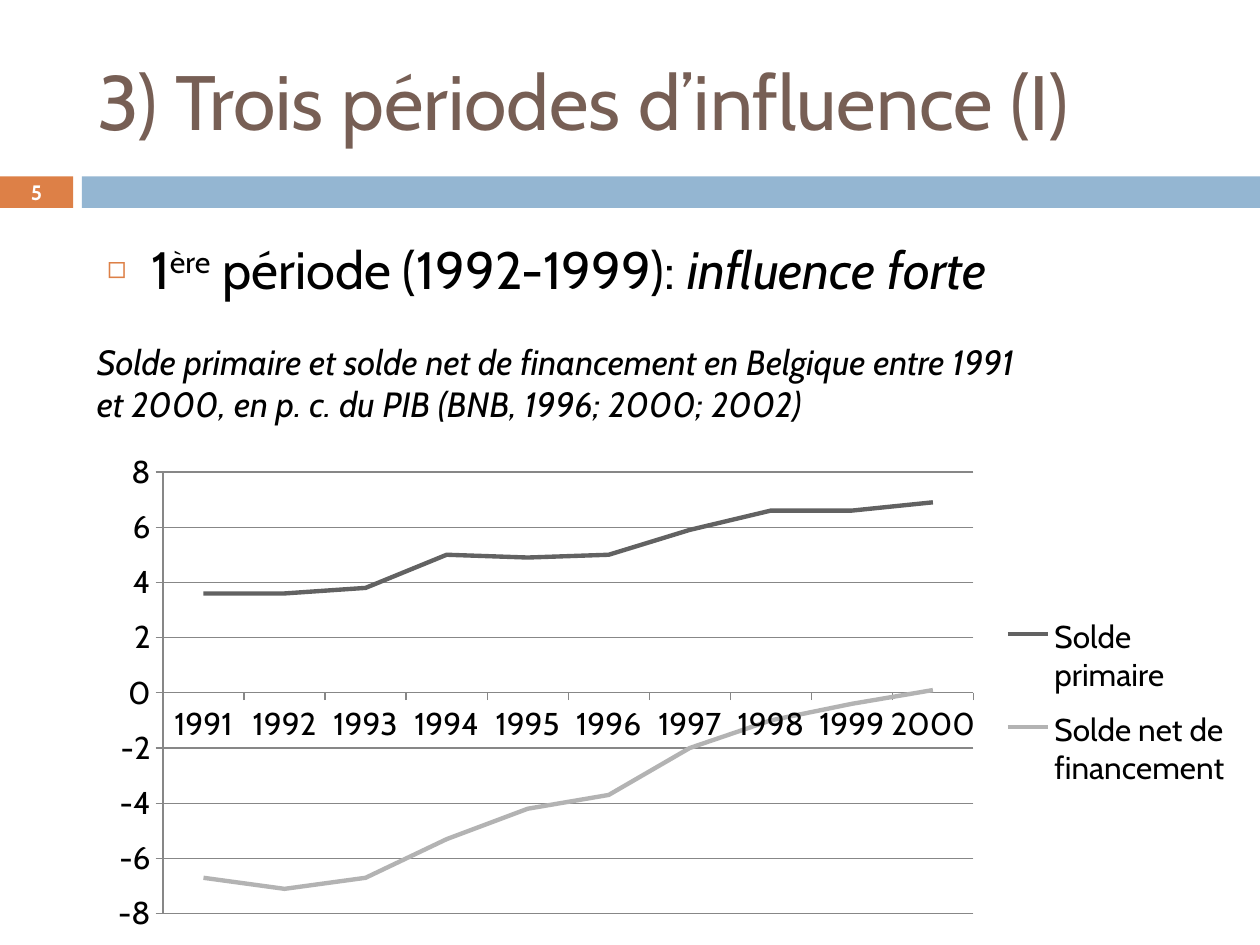
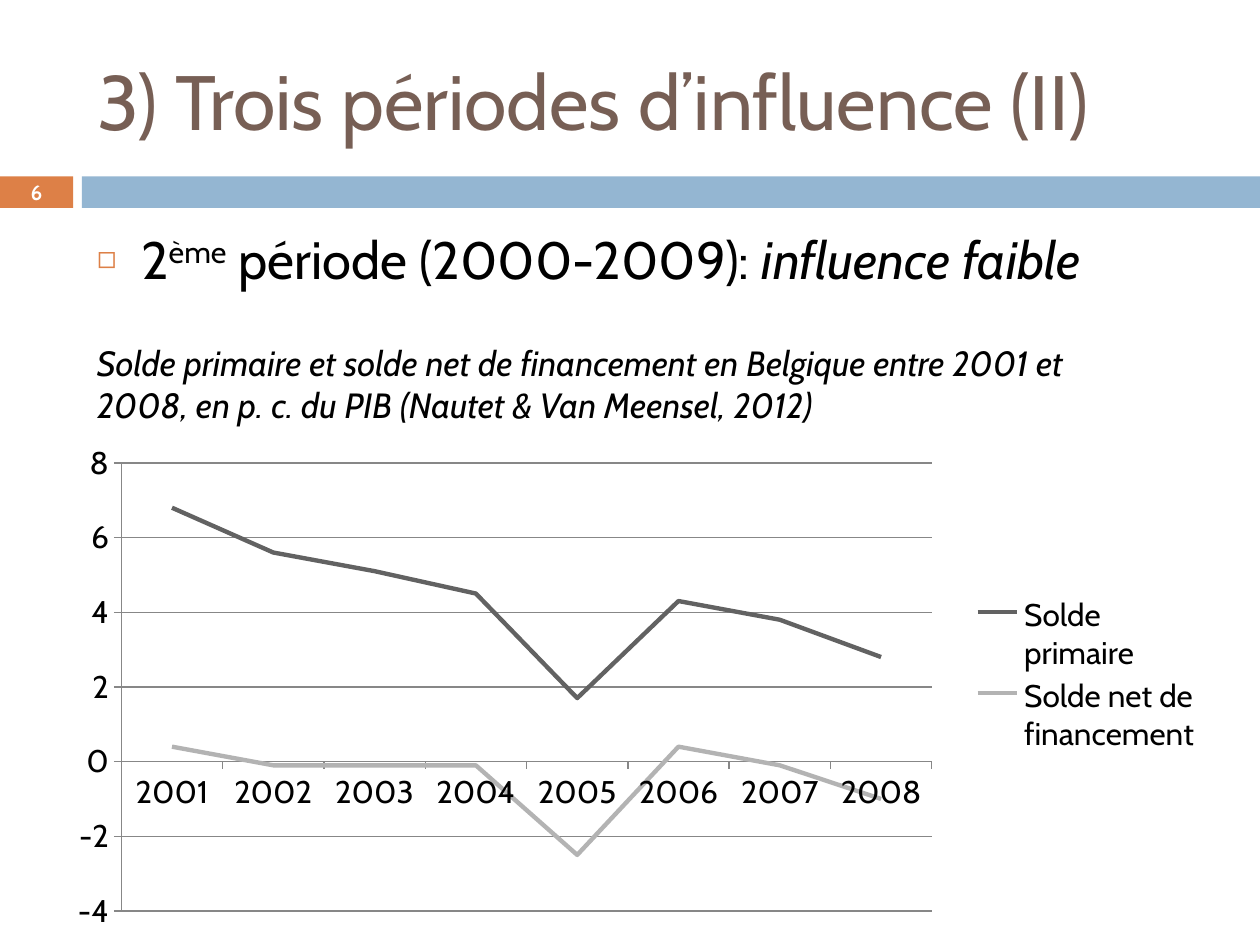
from pptx import Presentation
from pptx.chart.data import CategoryChartData
from pptx.dml.color import RGBColor
from pptx.enum.chart import XL_CHART_TYPE, XL_LEGEND_POSITION, XL_TICK_MARK
from pptx.enum.shapes import MSO_SHAPE
from pptx.enum.text import MSO_ANCHOR, MSO_AUTO_SIZE, PP_ALIGN
from pptx.oxml import parse_xml
from pptx.oxml.ns import nsdecls, qn
from pptx.util import Inches, Pt

FONT = "Cabin"
BLACK = RGBColor(0x00, 0x00, 0x00)
WHITE = RGBColor(0xFF, 0xFF, 0xFF)
BROWN = RGBColor(0x77, 0x5F, 0x55)
ORANGE = RGBColor(0xDD, 0x80, 0x47)
BLUE = RGBColor(0x94, 0xB6, 0xD2)
GRID_GREY = RGBColor(0x87, 0x87, 0x87)
SERIES_GREYS = (RGBColor(0x62, 0x62, 0x62), RGBColor(0xB3, 0xB3, 0xB3))


def manual_layout(left, top, width, height, inner=False):
    """Return a c:layout element; the numbers are fractions of the chart."""
    target = '<c:layoutTarget val="inner"/>' if inner else ""
    return parse_xml(
        f'<c:layout {nsdecls("c")}><c:manualLayout>{target}'
        '<c:xMode val="edge"/><c:yMode val="edge"/>'
        f'<c:x val="{left}"/><c:y val="{top}"/><c:w val="{width}"/><c:h val="{height}"/>'
        "</c:manualLayout></c:layout>")


class Deck:
    def __init__(self):
        self.prs = Presentation()
        self.prs.slide_width, self.prs.slide_height = Inches(10), Inches(7.5)
        self.slide = None

    def new_slide(self, title, number):
        self.slide = self.prs.slides.add_slide(self.prs.slide_layouts[1])
        self.band(0, 0.58, ORANGE)
        self.band(0.65, 9.35, BLUE)
        self.title(title)
        self.page_number(number)

    def place(self, shape, left, top, width, height):
        shape.left, shape.top = Inches(left), Inches(top)
        shape.width, shape.height = Inches(width), Inches(height)

    def run(self, paragraph, text, size, color=BLACK, bold=False, italic=False):
        run = paragraph.add_run()
        run.text = text
        font = run.font
        font.name, font.size, font.bold, font.italic = FONT, Pt(size), bold, italic
        font.color.rgb = color
        return run

    def band(self, left, width, color):
        band = self.slide.shapes.add_shape(
            MSO_SHAPE.RECTANGLE, Inches(left), Inches(1.4), Inches(width), Inches(0.25))
        band.shadow.inherit = False
        band.fill.solid()
        band.fill.fore_color.rgb = color
        band.line.fill.background()

    def title(self, text):
        title = self.slide.shapes.title
        self.place(title, 0.67, 0.25, 8.92, 1.08)
        frame = title.text_frame
        frame.auto_size = MSO_AUTO_SIZE.NONE
        frame.vertical_anchor = MSO_ANCHOR.MIDDLE
        frame.paragraphs[0].alignment = PP_ALIGN.LEFT
        self.run(frame.paragraphs[0], text, 44, BROWN)

    def text_box(self, left, top, width, height):
        frame = self.slide.shapes.add_textbox(
            Inches(left), Inches(top), Inches(width), Inches(height)).text_frame
        frame.word_wrap = True
        return frame

    def page_number(self, number):
        frame = self.text_box(0, 1.39, 0.58, 0.27)
        frame.vertical_anchor = MSO_ANCHOR.MIDDLE
        frame.paragraphs[0].alignment = PP_ALIGN.CENTER
        self.run(frame.paragraphs[0], str(number), 11.9, WHITE, bold=True)

    def period(self, box, ordinal, suffix, years, influence):
        """Fill the body with one bulleted line such as 1ère période."""
        body = self.slide.placeholders[1]
        self.place(body, *box)
        body.text_frame.auto_size = MSO_AUTO_SIZE.NONE
        line = body.text_frame.paragraphs[0]
        line.space_before = Pt(7)
        self.bullet(line)
        self.run(line, ordinal, 30)
        raised = self.run(line, suffix, 30)
        raised.font._element.set("baseline", "30000")
        self.run(line, f" période ({years}): ", 30)
        self.run(line, influence, 30, italic=True)

    def bullet(self, paragraph):
        props = paragraph._p.get_or_add_pPr()
        props.set("marL", str(Inches(0.35)))
        props.set("indent", str(-Inches(0.35)))
        for tag in (f'<a:buClr {nsdecls("a")}><a:srgbClr val="{ORANGE}"/></a:buClr>',
                    f'<a:buSzPct {nsdecls("a")} val="60000"/>',
                    f'<a:buChar {nsdecls("a")} char="◻"/>'):
            props.append(parse_xml(tag))

    def caption(self, top, width, *lines):
        frame = self.text_box(0.67, top, width, 0.77)
        for index, text in enumerate(lines):
            paragraph = frame.add_paragraph() if index else frame.paragraphs[0]
            self.run(paragraph, text, 20, italic=True)

    def balance_chart(self, left, top, first_year, primary, net, minimum, plot, legend):
        data = CategoryChartData()
        data.categories = [str(first_year + i) for i in range(len(primary))]
        data.add_series("Solde primaire", primary)
        data.add_series("Solde net de financement", net)
        chart = self.slide.shapes.add_chart(
            XL_CHART_TYPE.LINE, Inches(left), Inches(top),
            Inches(9.06), Inches(3.94), data).chart
        chart.has_title = False
        chart.font.name, chart.font.size = FONT, Pt(18)
        chart.font.color.rgb = BLACK
        chart.plots[0].vary_by_categories = False
        for series, grey in zip(chart.plots[0].series, SERIES_GREYS):
            series.smooth = False
            series.format.line.color.rgb = grey
            series.format.line.width = Pt(2.5)

        values = chart.value_axis
        values.minimum_scale, values.maximum_scale, values.major_unit = minimum, 8, 2
        values.has_major_gridlines = True
        for axis in (chart.category_axis, values):
            axis.major_tick_mark = XL_TICK_MARK.OUTSIDE
        for part in (chart.category_axis, values, values.major_gridlines):
            part.format.line.color.rgb = GRID_GREY
            part.format.line.width = Pt(0.75)

        plot_area = chart._chartSpace.chart.plotArea
        for layout in plot_area.findall(qn("c:layout")):
            plot_area.remove(layout)
        plot_area.insert(0, manual_layout(*plot, inner=True))
        chart.has_legend = True
        chart.legend.position = XL_LEGEND_POSITION.RIGHT
        chart.legend.include_in_layout = False
        legend_root = chart.legend._element
        for layout in legend_root.findall(qn("c:layout")):
            legend_root.remove(layout)
        legend_root.find(qn("c:legendPos")).addnext(manual_layout(*legend))


def main():
    deck = Deck()

    deck.new_slide("3) Trois périodes d’influence (I)", 5)
    deck.period((0.75, 1.83, 8.19, 0.58), "1", "ère", "1992-1999", "influence forte")
    deck.caption(2.65, 7.64,
                 "Solde primaire et solde net de financement en Belgique entre 1991 "
                 "et 2000, en p. c. du PIB (BNB, 1996; 2000; 2002)")
    deck.balance_chart(
        0.75, 3.51, 1991,
        primary=(3.6, 3.6, 3.8, 5, 4.9, 5, 5.9, 6.6, 6.6, 6.9),
        net=(-6.7, -7.1, -6.7, -5.3, -4.2, -3.7, -2, -1, -0.4, 0.1),
        minimum=-8, plot=(0.06, 0.06, 0.71, 0.89), legend=(0.79, 0.32, 0.21, 0.41))

    deck.new_slide("3) Trois périodes d’influence (II)", 6)
    deck.period((0.67, 1.75, 9.33, 5.39), "2", "ème", "2000-2009", "influence faible")
    deck.caption(2.66, 8.98,
                 "Solde primaire et solde net de financement en Belgique entre 2001 et",
                 "2008, en p. c. du PIB (Nautet & Van Meensel, 2012)")
    deck.balance_chart(
        0.51, 3.44, 2001,
        primary=(6.8, 5.6, 5.1, 4.5, 1.7, 4.3, 3.8, 2.8),
        net=(0.4, -0.1, -0.1, -0.1, -2.5, 0.4, -0.1, -1),
        minimum=-4, plot=(0.05, 0.06, 0.71, 0.91), legend=(0.79, 0.32, 0.21, 0.34))

    deck.prs.save("out.pptx")


if __name__ == "__main__":
    main()
